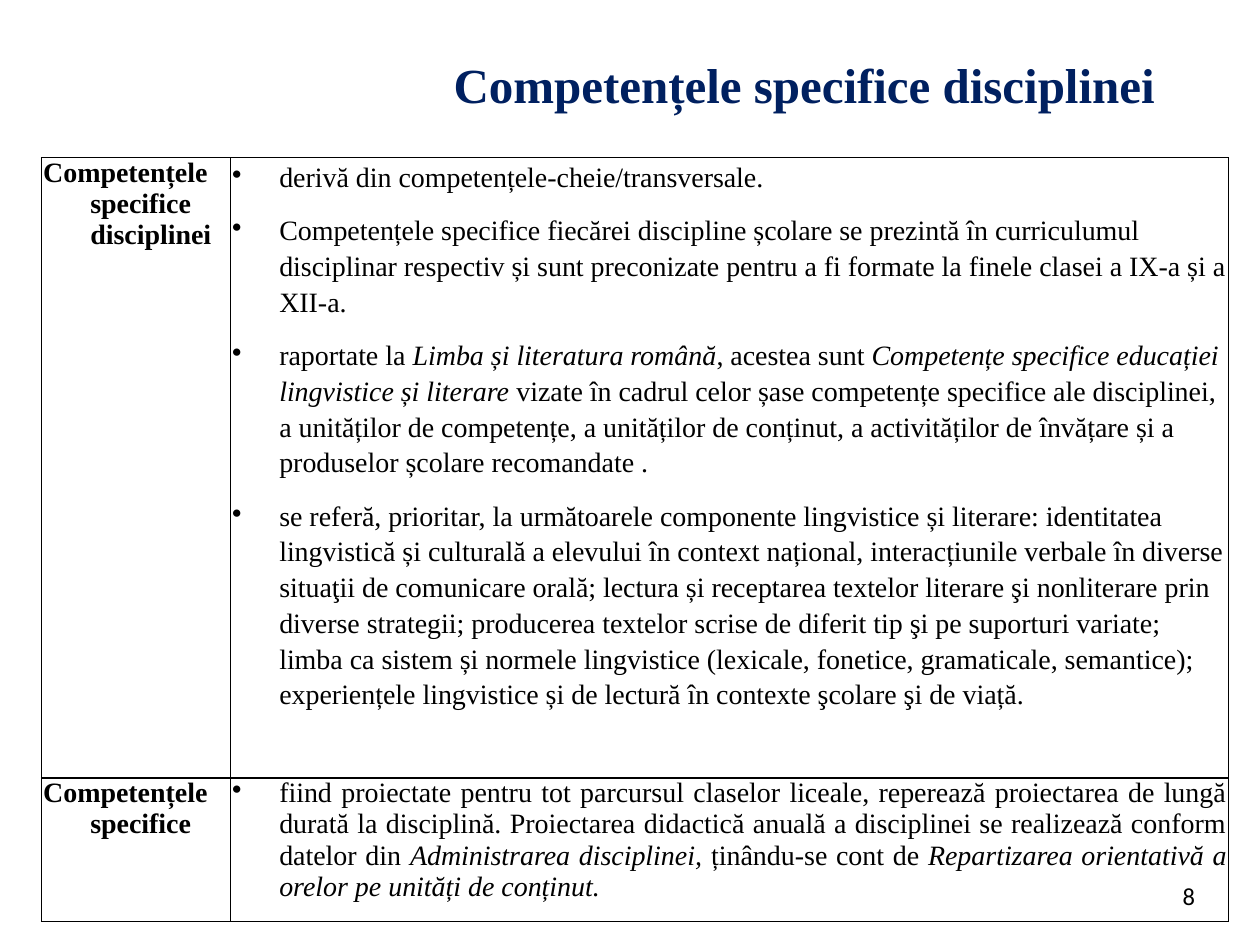
"""Build the slide on the specific competences of the school subject."""
from dataclasses import dataclass

from lxml.etree import SubElement
from pptx import Presentation
from pptx.dml.color import RGBColor
from pptx.enum.text import MSO_ANCHOR as Anchor, PP_ALIGN as Align
from pptx.oxml.ns import qn
from pptx.util import Cm, Pt

COLORS = {"title": "002060", "text": "000000", "border": "000000"}
SERIF = "Times New Roman"
INDENT = Cm(0.95)
COLUMN_WIDTHS = (3.81, 20.11)


@dataclass(frozen=True)
class Run:
    text: str
    italic: bool = False


@dataclass(frozen=True)
class Topic:
    heading: str
    points: tuple[tuple[Run, ...], ...]
    height: float
    align: Align = Align.LEFT
    line_spacing: float | None = None
    space_after: float = 0


TOPICS = (
    Topic(
        "Competențele specifice disciplinei",
        (
            (Run("derivă din competențele-cheie/transversale."),),
            (Run("Competențele specifice fiecărei discipline școlare se prezintă în curriculumul "
                 "disciplinar respectiv și sunt preconizate pentru a fi formate la finele clasei "
                 "a IX-a și a XII-a."),),
            (Run("raportate la "),
             Run("Limba și literatura română", True),
             Run(", acestea sunt "),
             Run("Competențe specifice educației lingvistice și literare ", True),
             Run("vizate în cadrul celor șase competențe specifice ale disciplinei, a unităților "
                 "de competențe, a unităților de conținut, a activităților de învățare și a "
                 "produselor școlare recomandate .")),
            (Run("se referă, prioritar, la următoarele componente lingvistice și literare: "
                 "identitatea lingvistică și culturală a elevului în context național, "
                 "interacțiunile verbale în diverse situaţii de comunicare orală; lectura și "
                 "receptarea textelor literare şi nonliterare prin diverse strategii; producerea "
                 "textelor scrise de diferit tip şi pe suporturi variate; limba ca sistem și "
                 "normele lingvistice (lexicale, fonetice, gramaticale, semantice); experiențele "
                 "lingvistice și de lectură în contexte şcolare şi de viață."),),
        ),
        height=12.5, line_spacing=1.15, space_after=10,
    ),
    Topic(
        "Competențele specifice",
        (
            (Run("fiind proiectate pentru tot parcursul claselor liceale, reperează proiectarea "
                 "de lungă durată la disciplină. Proiectarea didactică anuală a disciplinei se "
                 "realizează conform datelor din "),
             Run("Administrarea disciplinei, ", True),
             Run("ținându-se cont de "),
             Run("Repartizarea orientativă a orelor pe unități de conținut.", True)),
        ),
        height=2.9, align=Align.JUSTIFY,
    ),
)


def style(paragraph, size: float, color: str, name: str = SERIF, bold: bool = False) -> None:
    """Set the font shared by all runs of a paragraph."""
    font = paragraph.font
    font.size, font.name, font.bold = Pt(size), name, bold
    font.color.rgb = RGBColor.from_string(COLORS[color])


def hang(paragraph, bullet: str = "") -> None:
    """Give a paragraph a hanging indent and, if wanted, a bullet."""
    properties = paragraph._p.get_or_add_pPr()
    properties.set("marL", str(INDENT))
    properties.set("indent", str(-INDENT))
    if bullet:
        SubElement(properties, qn("a:buChar"), char=bullet)


def frame_cell(cell) -> None:
    """Border a cell, clear its fill and narrow its margins."""
    properties = cell._tc.get_or_add_tcPr()
    for side in ("lnL", "lnR", "lnT", "lnB"):
        line = SubElement(properties, qn(f"a:{side}"), w=str(Pt(1)))
        fill = SubElement(line, qn("a:solidFill"))
        SubElement(fill, qn("a:srgbClr"), val=COLORS["border"])
    cell.fill.background()
    cell.margin_left = cell.margin_right = Cm(0.03)
    cell.margin_top = cell.margin_bottom = 0


def fill_row(heading_cell, points_cell, topic: Topic) -> None:
    """Write one topic into its heading cell and its points cell."""
    frame_cell(heading_cell)
    frame_cell(points_cell)
    heading = heading_cell.text_frame.paragraphs[0]
    heading.add_run().text = topic.heading
    hang(heading)
    style(heading, 16, "text", bold=True)
    body = points_cell.text_frame
    for index, point in enumerate(topic.points):
        paragraph = body.add_paragraph() if index else body.paragraphs[0]
        hang(paragraph, "•")
        paragraph.alignment = topic.align
        paragraph.line_spacing = topic.line_spacing
        paragraph.space_after = Pt(topic.space_after)
        style(paragraph, 16, "text")
        for part in point:
            run = paragraph.add_run()
            run.text = part.text
            if part.italic:
                run.font.italic = True


def add_title(slide) -> None:
    """Place and format the slide title."""
    title = slide.shapes.title
    title.left, title.top, title.width, title.height = Cm(8.89), Cm(0.84), Cm(15.24), Cm(3.1)
    frame = title.text_frame
    frame.text = "Competențele specifice disciplinei"
    frame.vertical_anchor = Anchor.TOP
    frame.margin_top = Cm(0.25)
    frame.paragraphs[0].alignment = Align.LEFT
    style(frame.paragraphs[0], 28, "title", bold=True)


def add_page_number(slide) -> None:
    """Write the page number at the bottom right."""
    frame = slide.shapes.add_textbox(Cm(18.42), Cm(17.15), Cm(5.92), Cm(1.32)).text_frame
    frame.word_wrap = True
    frame.vertical_anchor = Anchor.BOTTOM
    number = frame.paragraphs[0]
    number.add_run().text = "8"
    number.alignment = Align.RIGHT
    style(number, 14, "text", "Calibri")


def add_topics(slide) -> None:
    """Draw the table of topics."""
    table = slide.shapes.add_table(
        len(TOPICS), len(COLUMN_WIDTHS), Cm(0.84), Cm(3.18),
        Cm(sum(COLUMN_WIDTHS)), Cm(sum(topic.height for topic in TOPICS)),
    ).table
    table.first_row = table.horz_banding = False
    for column, width in zip(table.columns, COLUMN_WIDTHS):
        column.width = Cm(width)
    for row, topic in zip(table.rows, TOPICS):
        row.height = Cm(topic.height)
        fill_row(*row.cells, topic)


def main() -> None:
    """Create and save the presentation."""
    deck = Presentation()
    deck.slide_width, deck.slide_height = Cm(25.4), Cm(19.05)
    slide = deck.slides.add_slide(deck.slide_layouts[5])
    add_title(slide)
    add_page_number(slide)
    add_topics(slide)
    deck.save("out.pptx")


if __name__ == "__main__":
    main()
